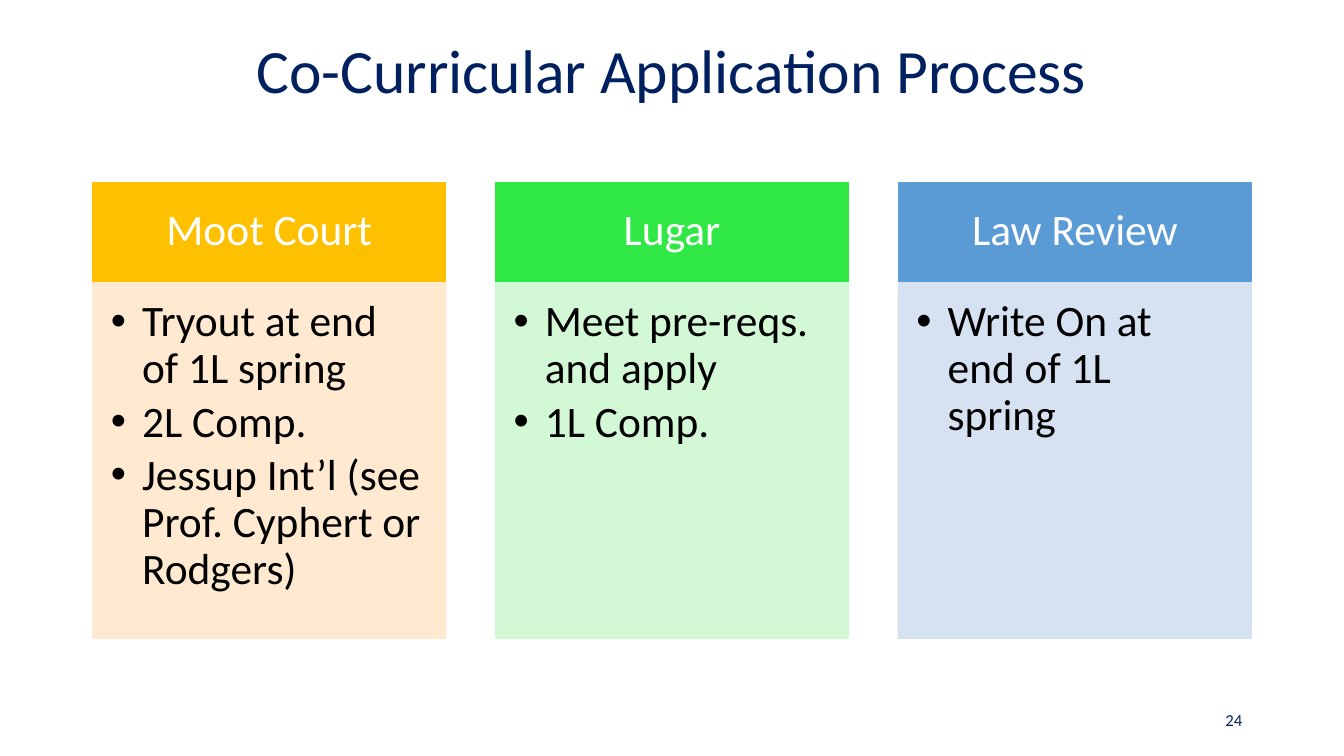
from dataclasses import dataclass

from lxml import etree
from pptx import Presentation
from pptx.dml.color import RGBColor
from pptx.enum.shapes import MSO_SHAPE
from pptx.enum.text import MSO_ANCHOR, MSO_AUTO_SIZE, PP_ALIGN
from pptx.oxml.ns import qn
from pptx.util import Inches, Pt

RECTANGLE = MSO_SHAPE.RECTANGLE
TOP, MIDDLE = MSO_ANCHOR.TOP, MSO_ANCHOR.MIDDLE
LEFT, CENTER, RIGHT = PP_ALIGN.LEFT, PP_ALIGN.CENTER, PP_ALIGN.RIGHT
NO_AUTOFIT = MSO_AUTO_SIZE.NONE
COMPARISON_LAYOUT = 4


@dataclass(frozen=True)
class Theme:
    font: str = "Calibri"
    navy: str = "002060"
    white: str = "FFFFFF"
    black: str = "000000"
    title_size: float = 44
    column_size: float = 31
    number_size: float = 12
    panel_opacity: int = 90


@dataclass(frozen=True)
class Grid:
    """Column and row measures in inches."""
    slide_width: float = 13.33
    slide_height: float = 7.5
    left: float = 0.92
    width: float = 11.49
    columns: int = 3
    column_width: float = 3.5
    title_height: float = 1.45
    header_top: float = 1.81
    header_height: float = 0.98
    panel_height: float = 3.54

    def column_left(self, index: int) -> float:
        pitch = (self.width - self.column_width) / (self.columns - 1)
        return self.left + index * pitch


@dataclass(frozen=True)
class Activity:
    name: str
    color: str
    tint: str
    steps: tuple[str, ...]


THEME = Theme()
GRID = Grid()
ACTIVITIES = (
    Activity("Moot Court", "FFC000", "FFE8CC",
             ("Tryout at end of 1L spring", "2L Comp.",
              "Jessup Int’l (see Prof. Cyphert or Rodgers)")),
    Activity("Lugar", "30E845", "CFF8D1",
             ("Meet pre-reqs. and apply", "1L Comp.")),
    Activity("Law Review", "5B9BD5", "D2DFF0",
             ("Write On at end of 1L spring",)),
)


def place(shape, left: float, top: float, width: float, height: float) -> None:
    shape.left, shape.top = Inches(left), Inches(top)
    shape.width, shape.height = Inches(width), Inches(height)


def paint(shape, color: str) -> None:
    shape.fill.solid()
    shape.fill.fore_color.rgb = RGBColor.from_string(color)
    shape.line.color.rgb = RGBColor.from_string(color)
    shape.line.width = Pt(1)


def set_opacity(shape, percent: int) -> None:
    for color in shape._element.spPr.iter(qn("a:srgbClr")):
        etree.SubElement(color, qn("a:alpha")).set("val", str(percent * 1000))


def write(shape, text: str, size: float, color: str, align, anchor=MIDDLE,
          margins: tuple[float, ...] = (0.1, 0.05, 0.1, 0.05)) -> None:
    frame = shape.text_frame
    frame.text = text
    frame.word_wrap = True
    frame.auto_size = NO_AUTOFIT
    frame.vertical_anchor = anchor
    (frame.margin_left, frame.margin_top,
     frame.margin_right, frame.margin_bottom) = map(Inches, margins)
    for paragraph in frame.paragraphs:
        paragraph.alignment = align
        paragraph.line_spacing = 0.9
        paragraph.space_before = Pt(0)
        for run in paragraph.runs:
            run.font.name = THEME.font
            run.font.size = Pt(size)
            run.font.bold = False
            run.font.color.rgb = RGBColor.from_string(color)


def add_bullets(shape, indent: float) -> None:
    for paragraph in shape.text_frame.paragraphs:
        paragraph.space_after = Pt(4.65)
        properties = paragraph._p.get_or_add_pPr()
        properties.set("marL", str(Inches(indent)))
        properties.set("indent", str(-Inches(indent)))
        etree.SubElement(properties, qn("a:buFont")).set("typeface", "Arial")
        etree.SubElement(properties, qn("a:buChar")).set("char", "•")


def add_activity(slide, panel, index: int, activity: Activity) -> None:
    left = GRID.column_left(index)

    # Coloured header
    header = slide.shapes.add_shape(RECTANGLE, 0, 0, 0, 0)
    header.shadow.inherit = False
    place(header, left, GRID.header_top, GRID.column_width, GRID.header_height)
    paint(header, activity.color)
    write(header, activity.name, THEME.column_size, THEME.white, CENTER,
          margins=(0.24, 0.14, 0.24, 0.14))

    # Tinted panel with the steps
    place(panel, left, GRID.header_top + GRID.header_height,
          GRID.column_width, GRID.panel_height)
    paint(panel, activity.tint)
    set_opacity(panel, THEME.panel_opacity)
    write(panel, "\n".join(activity.steps), THEME.column_size, THEME.black,
          LEFT, TOP, (0.18, 0.18, 0.24, 0.27))
    add_bullets(panel, 0.31)


def main() -> None:
    presentation = Presentation()
    presentation.slide_width = Inches(GRID.slide_width)
    presentation.slide_height = Inches(GRID.slide_height)
    slide = presentation.slides.add_slide(
        presentation.slide_layouts[COMPARISON_LAYOUT])

    # Title
    title, *panels = slide.placeholders
    place(title, GRID.left, 0, GRID.width, GRID.title_height)
    write(title, "Co-Curricular Application Process", THEME.title_size,
          THEME.navy, CENTER)

    # Activity columns
    for index, (panel, activity) in enumerate(zip(panels, ACTIVITIES)):
        add_activity(slide, panel, index, activity)
    for unused in panels[len(ACTIVITIES):]:
        unused._element.getparent().remove(unused._element)

    # Slide number
    number = slide.shapes.add_textbox(0, 0, 0, 0)
    place(number, 9.42, 6.95, 3, 0.4)
    write(number, "24", THEME.number_size, THEME.navy, RIGHT)

    presentation.save("out.pptx")


if __name__ == "__main__":
    main()
